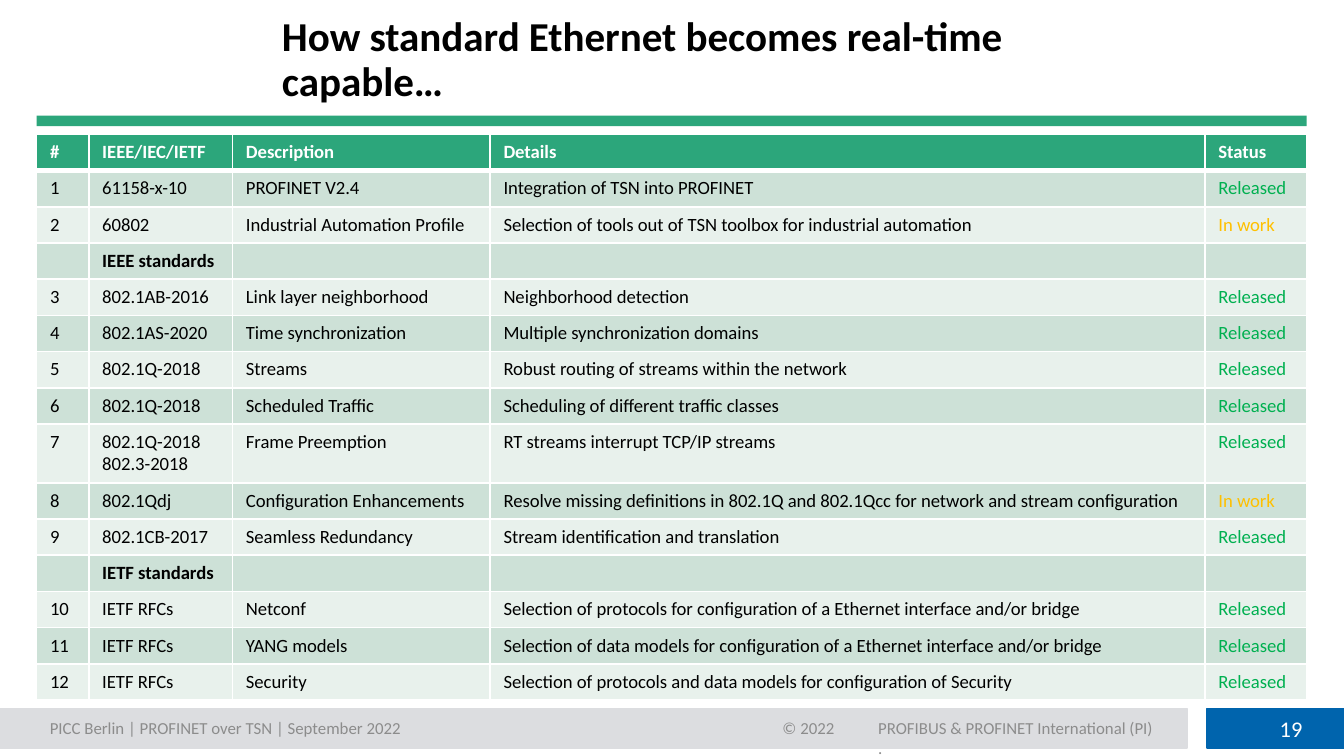
from lxml.etree import SubElement
from pptx import Presentation
from pptx.dml.color import RGBColor
from pptx.enum.shapes import MSO_SHAPE
from pptx.enum.text import MSO_ANCHOR as ANCHOR, PP_ALIGN as ALIGN
from pptx.oxml.ns import qn
from pptx.util import Pt

FONT = "Calibri"
COLORS = {
    "green": "2CA67B",
    "band_dark": "CDE1D7",
    "band_light": "E8F1EC",
    "released": "00B050",
    "in_work": "FFC000",
    "footer": "DCDDE0",
    "footer_text": "8C8C8C",
    "blue": "0064AD",
    "white": "FFFFFF",
    "black": "000000",
}
STATUS_COLORS = {"Released": "released", "In work": "in_work"}

TABLE_LEFT, TABLE_TOP, TABLE_WIDTH = 19.6, 72, 680.4
COLUMN_WIDTHS = [28, 77, 138, 383, 54.4]
ROW_HEIGHT, LINE_HEIGHT = 19.4, 12.2
FOOTER_TOP, FOOTER_HEIGHT = 379.6, 21

HEADER = ["#", "IEEE/IEC/IETF", "Description", "Details", "Status"]
ROWS = [
    ["1", "61158-x-10", "PROFINET V2.4", "Integration of TSN into PROFINET", "Released"],
    ["2", "60802", "Industrial Automation Profile",
     "Selection of tools out of TSN toolbox for industrial automation", "In work"],
    ["", "IEEE standards", "", "", ""],
    ["3", "802.1AB-2016", "Link layer neighborhood", "Neighborhood detection", "Released"],
    ["4", "802.1AS-2020", "Time synchronization", "Multiple synchronization domains", "Released"],
    ["5", "802.1Q-2018", "Streams", "Robust routing of streams within the network", "Released"],
    ["6", "802.1Q-2018", "Scheduled Traffic", "Scheduling of different traffic classes", "Released"],
    ["7", "802.1Q-2018\n802.3-2018", "Frame Preemption",
     "RT streams interrupt TCP/IP streams", "Released"],
    ["8", "802.1Qdj", "Configuration Enhancements",
     "Resolve missing definitions in 802.1Q and 802.1Qcc for network and stream configuration",
     "In work"],
    ["9", "802.1CB-2017", "Seamless Redundancy", "Stream identification and translation", "Released"],
    ["", "IETF standards", "", "", ""],
    ["10", "IETF RFCs", "Netconf",
     "Selection of protocols for configuration of a Ethernet interface and/or bridge", "Released"],
    ["11", "IETF RFCs", "YANG models",
     "Selection of data models for configuration of a Ethernet interface and/or bridge", "Released"],
    ["12", "IETF RFCs", "Security",
     "Selection of protocols and data models for configuration of Security", "Released"],
]


def color(name):
    return RGBColor.from_string(COLORS[name])


def write_text(text_frame, text, size, color_name, bold=False, align=None):
    for index, line in enumerate(text.split("\n")):
        paragraph = text_frame.paragraphs[0] if index == 0 else text_frame.add_paragraph()
        paragraph.alignment = align
        if not line:
            SubElement(paragraph._p, qn("a:endParaRPr")).set("sz", str(size * 100))
            continue
        run = paragraph.add_run()
        run.text = line
        run.font.name = FONT
        run.font.size = Pt(size)
        run.font.bold = bold
        run.font.color.rgb = color(color_name)


def add_bar(slide, left, top, width, height, color_name, outlined=True):
    shape = slide.shapes.add_shape(MSO_SHAPE.RECTANGLE, Pt(left), Pt(top), Pt(width), Pt(height))
    shape.shadow.inherit = False
    shape.fill.solid()
    shape.fill.fore_color.rgb = color(color_name)
    if outlined:
        shape.line.color.rgb = color(color_name)
        shape.line.width = Pt(1)
    else:
        shape.line.fill.background()


def add_text(slide, left, top, width, height, text, size, color_name,
             bold=False, align=None, anchor=ANCHOR.MIDDLE):
    box = slide.shapes.add_textbox(Pt(left), Pt(top), Pt(width), Pt(height))
    text_frame = box.text_frame
    text_frame.word_wrap = True
    text_frame.vertical_anchor = anchor
    write_text(text_frame, text, size, color_name, bold, align)
    return text_frame


def set_borders(cell, top, bottom):
    properties = cell._tc.get_or_add_tcPr()
    sides = {"a:lnL": 1, "a:lnR": 1, "a:lnT": top, "a:lnB": bottom}
    for index, (side, width) in enumerate(sides.items()):
        line = SubElement(properties, qn(side))
        line.set("w", str(Pt(width)))
        fill = SubElement(line, qn("a:solidFill"))
        SubElement(fill, qn("a:srgbClr")).set("val", COLORS["white"])
        properties.remove(line)
        properties.insert(index, line)


def add_standards_table(slide):
    rows = [HEADER] + ROWS
    heights = [ROW_HEIGHT + LINE_HEIGHT * max(text.count("\n") for text in row) for row in rows]
    frame = slide.shapes.add_table(len(rows), len(HEADER), Pt(TABLE_LEFT), Pt(TABLE_TOP),
                                   Pt(TABLE_WIDTH), Pt(sum(heights)))
    table = frame.table
    for column, width in zip(table.columns, COLUMN_WIDTHS):
        column.width = Pt(width)
    for row_index, texts in enumerate(rows):
        table.rows[row_index].height = Pt(heights[row_index])
        is_header = row_index == 0
        band = "green" if is_header else "band_dark" if row_index % 2 else "band_light"
        bold = is_header or not texts[0]
        for column_index, text in enumerate(texts):
            cell = table.cell(row_index, column_index)
            cell.fill.solid()
            cell.fill.fore_color.rgb = color(band)
            set_borders(cell, 3 if row_index == 1 else 1, 3 if is_header else 1)
            text_color = "white" if is_header else STATUS_COLORS.get(text, "black")
            write_text(cell.text_frame, text, 10, text_color, bold)


def add_title(slide):
    title = add_text(slide, 144, 8, 556, 49, "How standard Ethernet becomes real-time capable…",
                     22, "black", bold=True)
    title.margin_right = Pt(100)
    title.paragraphs[0].line_spacing = 0.9
    add_bar(slide, TABLE_LEFT, 62, TABLE_WIDTH, 5.6, "green", outlined=False)


def add_footer(slide):
    add_bar(slide, 0, FOOTER_TOP, 636, FOOTER_HEIGHT, "footer")
    add_bar(slide, 646.6, FOOTER_TOP, 73.4, FOOTER_HEIGHT, "blue")
    add_text(slide, TABLE_LEFT, FOOTER_TOP, 226, FOOTER_HEIGHT,
             "PICC Berlin | PROFINET over TSN | September 2022", 9, "footer_text")
    year = add_text(slide, 419.2, FOOTER_TOP, 32, FOOTER_HEIGHT, "© 2022", 9, "footer_text")
    year.margin_left = year.margin_right = year.margin_top = year.margin_bottom = 0
    add_text(slide, 463.4, 380.8, 163, 29, "PROFIBUS & PROFINET International (PI)\n.",
             9, "footer_text", anchor=ANCHOR.TOP)
    add_text(slide, 662.4, FOOTER_TOP, 42.4, FOOTER_HEIGHT, "19", 12, "white", align=ALIGN.RIGHT)


def main():
    presentation = Presentation()
    presentation.slide_width = Pt(720)
    presentation.slide_height = Pt(405)
    slide = presentation.slides.add_slide(presentation.slide_layouts[6])
    add_footer(slide)
    add_title(slide)
    add_standards_table(slide)
    presentation.save("out.pptx")


if __name__ == "__main__":
    main()
